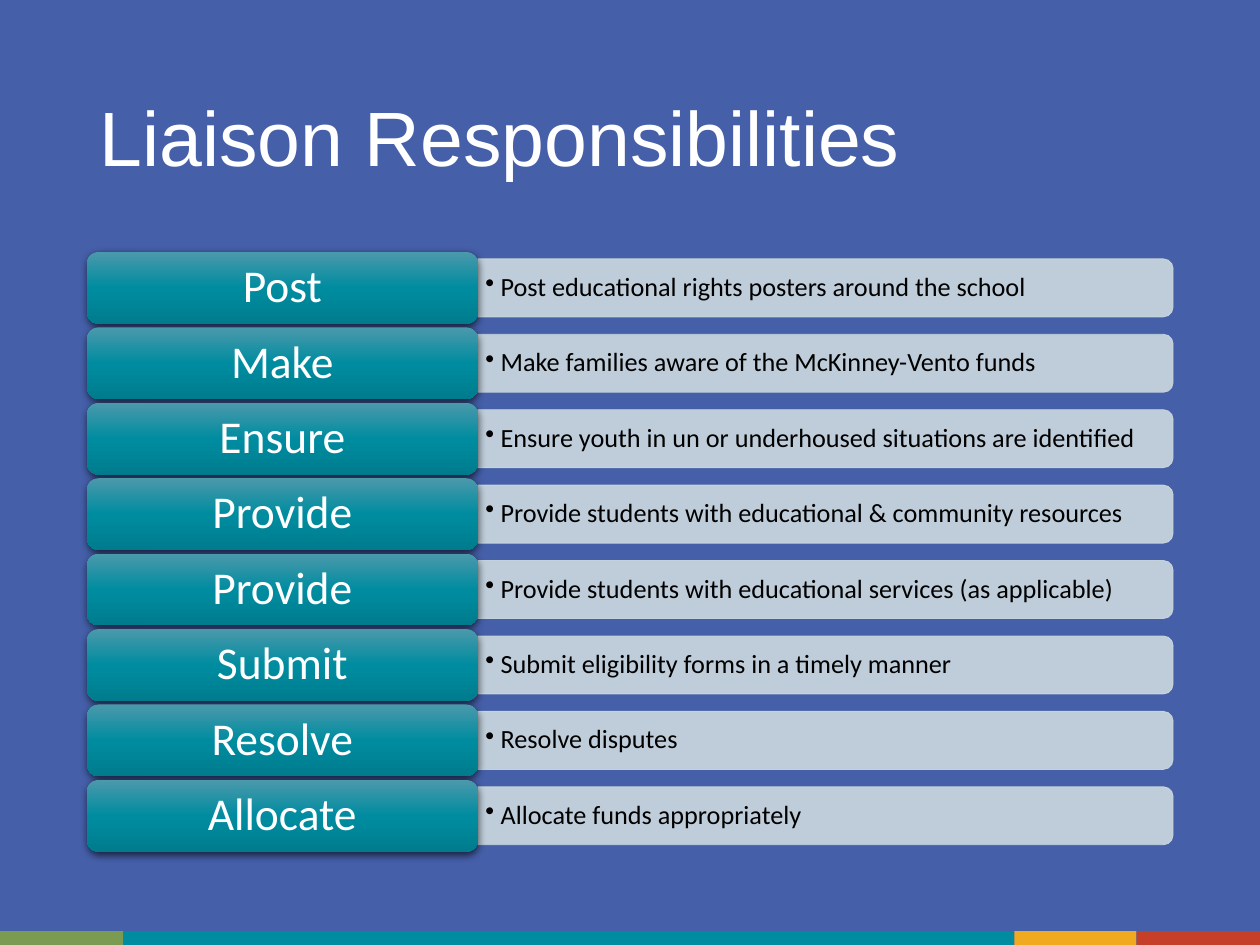
"""Build the Liaison Responsibilities slide: eight action labels, each with a detail bar."""
import copy
from dataclasses import dataclass

import lxml.etree
import pptx
import pptx.dml.color
import pptx.enum.shapes
import pptx.enum.text
import pptx.oxml.ns
import pptx.util


@dataclass
class Theme:
    background: str = "455FA9"
    bar: str = "CCDADF"
    light_text: str = "FFFFFF"
    dark_text: str = "000000"
    label_gradient: tuple = ((0, "4B99AB"), (0.5, "008CA0"), (1, "007C8E"))
    strip: tuple = ((0.098, "7C9B52"), (0.707, "008CA0"), (0.097, "EFAA1F"), (0.098, "C63F28"))
    title_font: str = "Arial"
    body_font: str = "Calibri"
    title_size: int = 44
    label_size: int = 26
    detail_size: int = 15


def color(value):
    return pptx.dml.color.RGBColor.from_string(value)


def write(shape, text, font, size, ink, align, insets):
    frame = shape.text_frame
    frame.text = text
    frame.word_wrap = True
    frame.vertical_anchor = pptx.enum.text.MSO_ANCHOR.MIDDLE
    frame.margin_left = frame.margin_right = pptx.util.Inches(insets[0])
    frame.margin_top = frame.margin_bottom = pptx.util.Inches(insets[1])
    para = frame.paragraphs[0]
    para.alignment = align
    para.line_spacing = 0.9
    for span in para.runs:
        span.font.name = font
        span.font.size = pptx.util.Pt(size)
        span.font.color.rgb = color(ink)
    return para


theme = Theme()
qn = pptx.oxml.ns.qn
inches = pptx.util.Inches
kinds = pptx.enum.shapes.MSO_SHAPE
LEFT = pptx.enum.text.PP_ALIGN.LEFT
CENTER = pptx.enum.text.PP_ALIGN.CENTER

responsibilities = [
    ("Post", "Post educational rights posters around the school"),
    ("Make", "Make families aware of the McKinney-Vento funds"),
    ("Ensure", "Ensure youth in un or underhoused situations are identified"),
    ("Provide", "Provide students with educational & community resources"),
    ("Provide", "Provide students with educational services (as applicable)"),
    ("Submit", "Submit eligibility forms in a timely manner"),
    ("Resolve", "Resolve disputes"),
    ("Allocate", "Allocate funds appropriately"),
]

deck = pptx.Presentation()
deck.slide_width, deck.slide_height = inches(10), inches(7.5)
page = deck.slides.add_slide(deck.slide_layouts[5])
page.background.fill.solid()
page.background.fill.fore_color.rgb = color(theme.background)

strip_height = 0.11
strip_left = 0
for share, fill in theme.strip:
    band = page.shapes.add_shape(
        kinds.RECTANGLE, inches(strip_left), inches(7.5 - strip_height),
        inches(10 * share), inches(strip_height))
    band.shadow.inherit = False
    band.fill.solid()
    band.fill.fore_color.rgb = color(fill)
    band.line.fill.background()
    strip_left += 10 * share

margin = 0.69
content_width = 10 - 2 * margin
label_width = 0.36 * content_width
bar_width = content_width - label_width
bar_left = margin + label_width
grid_top, grid_bottom = 2, 6.76
label_height, bar_height, detail_height = 0.57, 0.46, 0.41
row_pitch = (grid_bottom - grid_top - label_height) / (len(responsibilities) - 1)

title = page.shapes.title
title.left, title.top = inches(margin), inches(0.4)
title.width, title.height = inches(content_width), inches(1.45)
write(title, "Liaison Responsibilities", theme.title_font, theme.title_size,
      theme.light_text, LEFT, (0.1, 0.05))

for row, (action, detail) in enumerate(responsibilities):
    top = grid_top + row * row_pitch
    middle = top + label_height / 2

    bar = page.shapes.add_shape(
        kinds.ROUND_2_SAME_RECTANGLE,
        inches(bar_left + (bar_width - bar_height) / 2), inches(middle - bar_width / 2),
        inches(bar_height), inches(bar_width))
    bar.rotation = 90
    bar.shadow.inherit = False
    bar.fill.solid()
    bar.fill.fore_color.rgb = color(theme.bar)
    bar.line.color.rgb = color(theme.bar)
    bar.line.width = pptx.util.Pt(0.5)
    for paint in bar._element.spPr.iter(qn("a:srgbClr")):
        lxml.etree.SubElement(paint, qn("a:alpha"), val="90000")

    box = page.shapes.add_textbox(
        inches(bar_left), inches(middle - detail_height / 2),
        inches(bar_width), inches(detail_height))
    para = write(box, detail, theme.body_font, theme.detail_size,
                 theme.dark_text, LEFT, (0.06, 0.03))
    para.level = 1
    properties = para._p.get_or_add_pPr()
    properties.set("marL", str(inches(0.12)))
    properties.set("indent", str(-inches(0.12)))
    lxml.etree.SubElement(properties, qn("a:buChar"), char="•")

    label = page.shapes.add_shape(
        kinds.ROUNDED_RECTANGLE, inches(margin), inches(top),
        inches(label_width), inches(label_height))
    label.line.fill.background()
    label.fill.gradient()
    label.fill.gradient_angle = 270
    stop_list = label._element.spPr.find(".//" + qn("a:gsLst"))
    stop_list.append(copy.deepcopy(stop_list[0]))
    for stop, (position, shade) in zip(label.fill.gradient_stops, theme.label_gradient):
        stop.position = position
        stop.color.rgb = color(shade)
    label.shadow.inherit = False
    shadow = lxml.etree.SubElement(
        label._element.spPr.find(qn("a:effectLst")), qn("a:outerShdw"),
        blurRad=str(pptx.util.Pt(4.5)), dist=str(pptx.util.Pt(1.5)),
        dir="5400000", algn="ctr", rotWithShape="0")
    shade = lxml.etree.SubElement(shadow, qn("a:srgbClr"), val=theme.dark_text)
    lxml.etree.SubElement(shade, qn("a:alpha"), val="63000")
    write(label, action, theme.body_font, theme.label_size,
          theme.light_text, CENTER, (0.11, 0.05))

deck.save("out.pptx")
